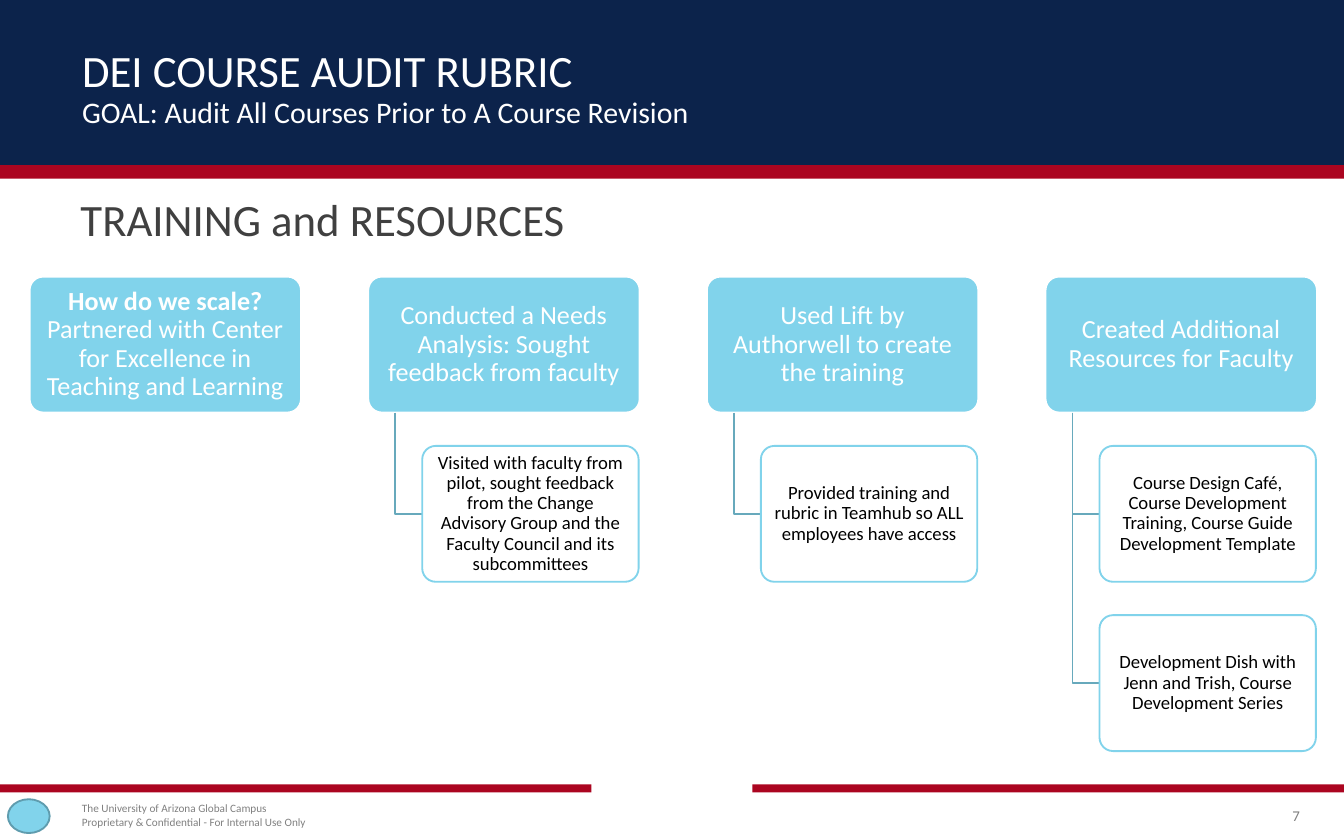
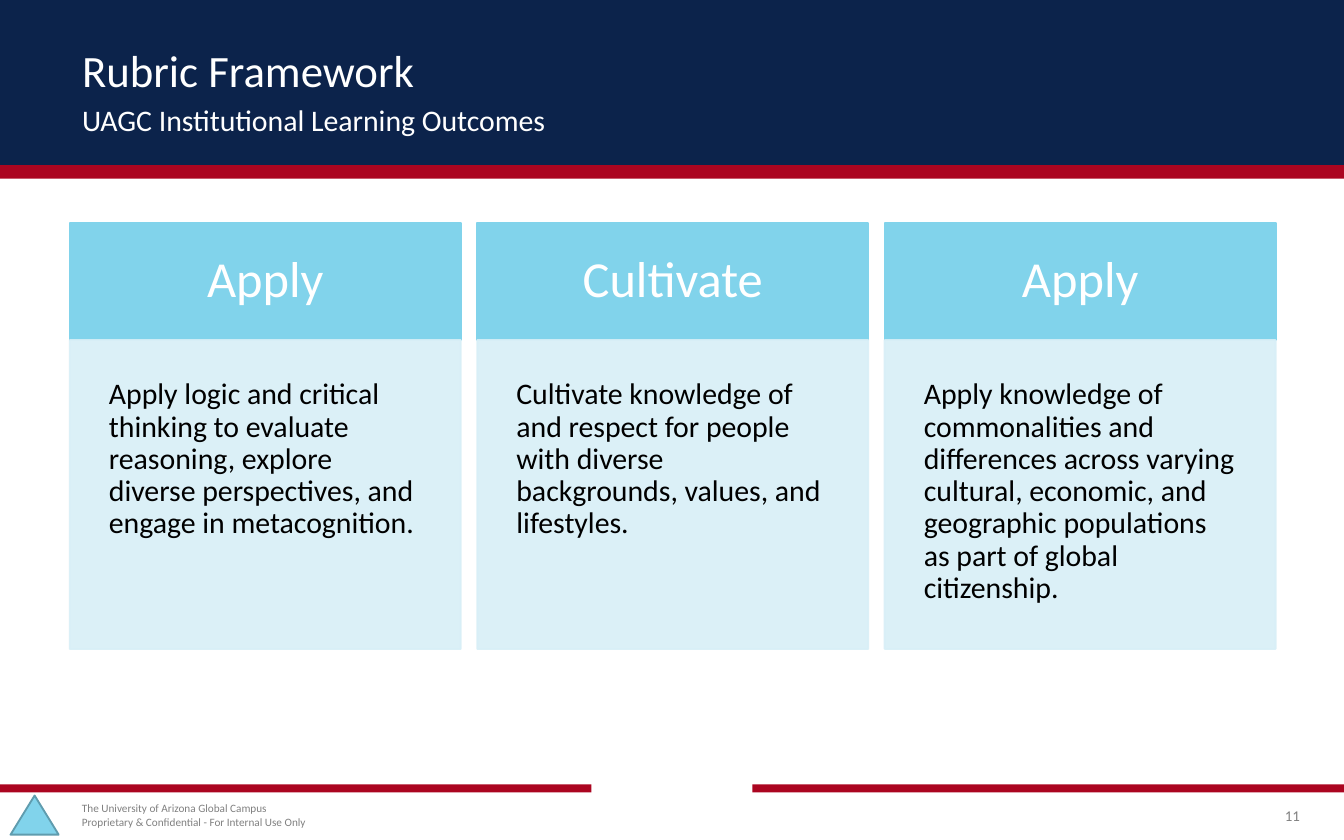
"""Build two slides on a DEI course audit rubric: training resources and learning outcomes."""
import dataclasses

import pptx
import pptx.dml.color
import pptx.enum.shapes
import pptx.enum.text
import pptx.oxml.xmlchemy
import pptx.util

Cm = pptx.util.Cm
SHAPES = pptx.enum.shapes.MSO_SHAPE
ALIGN = pptx.enum.text.PP_ALIGN
ANCHOR = pptx.enum.text.MSO_ANCHOR


@dataclasses.dataclass(frozen=True)
class Theme:
    font: str = "Calibri"
    navy: str = "0C234B"
    red: str = "AB0520"
    sky: str = "81D3EB"
    pale: str = "D8EFF7"
    branch: str = "67A9BC"
    badge_edge: str = "5F9CAE"
    white: str = "FFFFFF"
    black: str = "000000"
    charcoal: str = "404040"
    grey: str = "808080"
    title: int = 24
    subtitle: int = 16
    card: int = 14
    detail: int = 10
    outcome: int = 27
    outcome_text: int = 16
    page: int = 8
    footer: int = 6


theme = Theme()


def draw(slide, preset, box, fill, line=None, alpha=None):
    shape = slide.shapes.add_shape(preset, *map(Cm, box))
    shape.shadow.inherit = False
    shape.fill.solid()
    shape.fill.fore_color.rgb = pptx.dml.color.RGBColor.from_string(fill)
    if line:
        shape.line.color.rgb = pptx.dml.color.RGBColor.from_string(line)
        shape.line.width = pptx.util.Pt(1)
    else:
        shape.line.fill.background()
    if alpha:
        for tint in shape._element.spPr.xpath(f'.//a:srgbClr[@val="{fill}"]'):
            opacity = pptx.oxml.xmlchemy.OxmlElement("a:alpha")
            opacity.set("val", str(alpha * 1000))
            tint.append(opacity)
    return shape


def write(shape, lines, size, color, insets, align=ALIGN.LEFT, anchor=ANCHOR.MIDDLE, spacing=0.9):
    frame = shape.text_frame
    frame.word_wrap = True
    frame.auto_size = pptx.enum.text.MSO_AUTO_SIZE.NONE
    frame.vertical_anchor = anchor
    frame.margin_left, frame.margin_top, frame.margin_right, frame.margin_bottom = map(Cm, insets)
    paragraph = frame.paragraphs[0]
    paragraph.alignment = align
    paragraph.line_spacing = spacing
    paragraph.space_before = pptx.util.Pt(0)
    if shape.is_placeholder:
        properties = paragraph._p.get_or_add_pPr()
        properties.set("marL", "0")
        properties.set("indent", "0")
        properties.append(pptx.oxml.xmlchemy.OxmlElement("a:buNone"))
    for number, line in enumerate(lines):
        if number:
            paragraph.add_line_break()
        for text, bold in line:
            run = paragraph.add_run()
            run.text = text
            run.font.name = theme.font
            run.font.size = pptx.util.Pt(size)
            run.font.bold = bold
            run.font.color.rgb = pptx.dml.color.RGBColor.from_string(color)


deck = pptx.Presentation()
deck.slide_width, deck.slide_height = Cm(25.4), Cm(15.88)

bands = [
    ((0, 0, 25.4, 3.38), theme.red),
    ((0, 0, 25.4, 3.12), theme.navy),
    ((0, 14.83, 11.18, 0.15), theme.red),
    ((14.22, 14.83, 11.18, 0.15), theme.red),
]
footer_lines = [
    "The University of Arizona Global Campus",
    "Proprietary & Confidential - For Internal Use Only",
]
openings = [
    (3, "DEI COURSE AUDIT RUBRIC", "GOAL: Audit All Courses Prior to A Course Revision", 1.78, "7"),
    (1, "Rubric Framework", "UAGC Institutional Learning Outcomes", 1.93, "11"),
]

slides = []
for layout, heading, goal, goal_top, page in openings:
    slide = deck.slides.add_slide(deck.slide_layouts[layout])
    slides.append(slide)
    for depth, (box, color) in enumerate(bands):
        band = draw(slide, SHAPES.RECTANGLE, box, color)
        slide.shapes._spTree.insert(2 + depth, band._element)

    headers = [
        (slide.shapes.title, heading, 0.86, 1.02, theme.title),
        (slide.placeholders[1], goal, goal_top, 0.76, theme.subtitle),
    ]
    for header, text, top, height, size in headers:
        header.left, header.top, header.width, header.height = map(Cm, (1.3, top, 22.83, height))
        write(header, [[(text, False)]], size, theme.white, [0.25] * 4)

    footer = slide.shapes.add_textbox(*map(Cm, (1.3, 15.09, 5.23, 0.64)))
    write(footer, [[(text, False)] for text in footer_lines], theme.footer, theme.grey,
          (0.25, 0, 0, 0), spacing=1.0)
    page_number = slide.shapes.add_textbox(*map(Cm, (23.27, 15.09, 1.3, 0.64)))
    write(page_number, [[(page, False)]], theme.page, theme.grey, [0] * 4, ALIGN.RIGHT, spacing=1.0)

training, framework = slides

topic = training.placeholders[2]
topic.left, topic.top, topic.width, topic.height = map(Cm, (1.27, 3.56, 22.83, 1.27))
write(topic, [[("TRAINING and RESOURCES", False)]], theme.title, theme.charcoal,
      (0.25, 0.13, 0.25, 0.13))

steps = [
    ([("How do we scale? ", True),
      ("Partnered with Center for Excellence in Teaching and Learning", False)], []),
    ([("Conducted a Needs Analysis: Sought feedback from faculty", False)],
     ["Visited with faculty from pilot, sought feedback from the Change Advisory Group "
      "and the Faculty Council and its subcommittees"]),
    ([("Used Lift by Authorwell to create the training", False)],
     ["Provided training and rubric in Teamhub so ALL employees have access"]),
    ([("Created Additional Resources for Faculty", False)],
     ["Course Design Café, Course Development Training, Course Guide Development Template",
      "Development Dish with Jenn and Trish, Course Development Series"]),
]
card_top, card_height, row_pitch = 5.23, 2.57, 3.2
for column, (step, details) in enumerate(steps):
    left = 0.56 + 6.4 * column
    card = draw(training, SHAPES.ROUNDED_RECTANGLE, (left, card_top, 5.13, card_height),
                theme.sky, theme.white)
    card.adjustments[0] = 0.1
    write(card, [step], theme.card, theme.white, (0.15, 0.13, 0.15, 0.13), ALIGN.CENTER)
    for row, detail in enumerate(details, start=1):
        top = card_top + row_pitch * row
        trunk, middle = Cm(left + 0.51), Cm(top + card_height / 2)
        outline = training.shapes.build_freeform(trunk, Cm(card_top + card_height))
        outline.add_line_segments([(trunk, middle), (Cm(left + 1.02), middle)], close=False)
        branch = outline.convert_to_shape()
        branch.shadow.inherit = False
        branch.fill.background()
        branch.line.color.rgb = pptx.dml.color.RGBColor.from_string(theme.branch)
        branch.line.width = pptx.util.Pt(1)
        note = draw(training, SHAPES.ROUNDED_RECTANGLE, (left + 1.02, top, 4.09, card_height),
                    theme.white, theme.sky, 90)
        note.adjustments[0] = 0.1
        write(note, [[(detail, False)]], theme.detail, theme.black,
              (0.13, 0.1, 0.13, 0.1), ALIGN.CENTER)

outcomes = [
    ("Apply", "Apply logic and critical thinking to evaluate reasoning, explore diverse "
              "perspectives, and engage in metacognition."),
    ("Cultivate", "Cultivate knowledge of and respect for people with diverse backgrounds, "
                  "values, and lifestyles."),
    ("Apply", "Apply knowledge of commonalities and differences across varying cultural, "
              "economic, and geographic populations as part of global citizenship."),
]
for column, (verb, meaning) in enumerate(outcomes):
    left = 1.32 + 7.7 * column
    outcome = draw(framework, SHAPES.RECTANGLE, (left, 4.22, 7.39, 2.21), theme.sky, theme.sky)
    write(outcome, [[(verb, False)]], theme.outcome, theme.white, [0.58] * 4, ALIGN.CENTER)
    description = draw(framework, SHAPES.RECTANGLE, (left, 6.43, 7.39, 5.84),
                       theme.pale, theme.pale, 90)
    write(description, [[(meaning, False)]], theme.outcome_text, theme.black, [0.74] * 4,
          anchor=ANCHOR.TOP)

draw(training, SHAPES.OVAL, (0.15, 15.11, 0.79, 0.64), theme.sky, theme.badge_edge)
draw(framework, SHAPES.ISOSCELES_TRIANGLE, (0.2, 15.04, 0.91, 0.74), theme.sky, theme.badge_edge)

deck.save("out.pptx")
